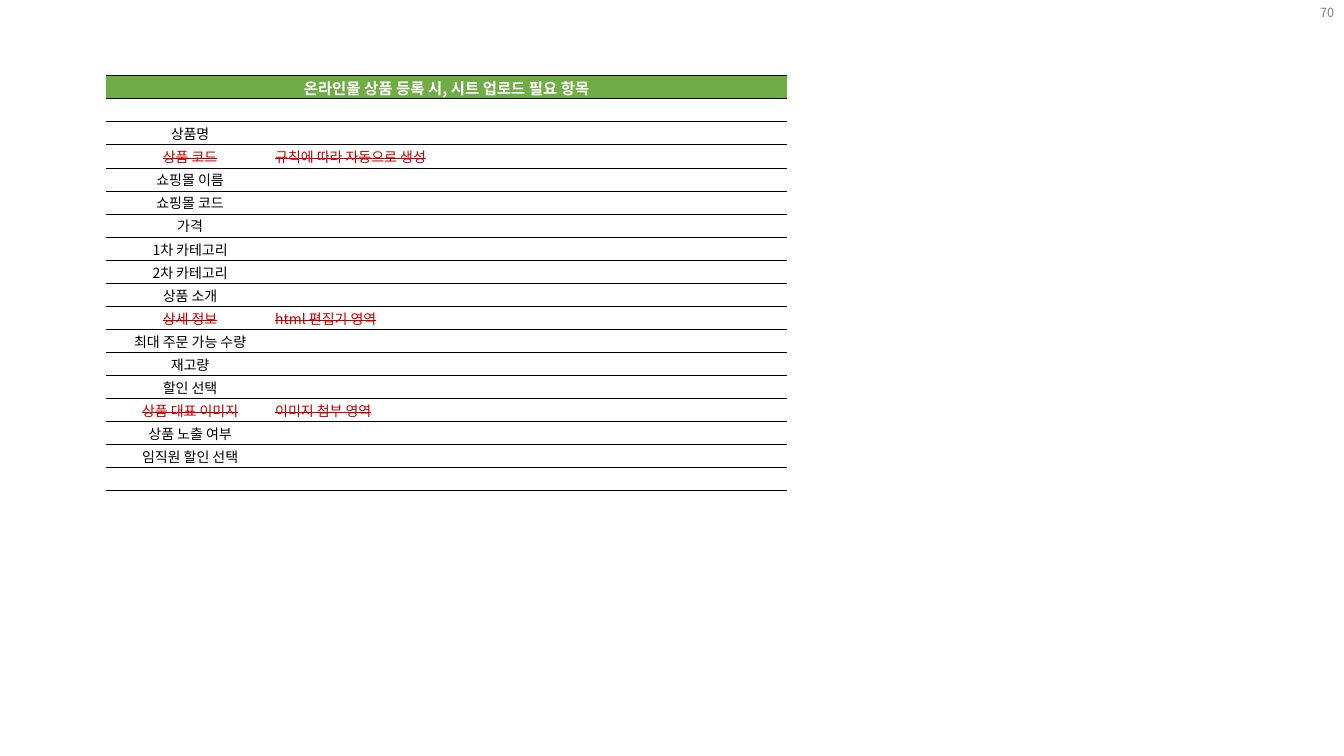
"""Build a slide listing the fields needed to upload shop products from a spreadsheet."""
from dataclasses import dataclass

import pptx
import pptx.dml.color
import pptx.enum.text
import pptx.oxml
import pptx.oxml.ns
import pptx.util
from pptx.util import Inches

ALIGN = pptx.enum.text.PP_ALIGN
MIDDLE = pptx.enum.text.MSO_ANCHOR.MIDDLE


@dataclass(frozen=True)
class Theme:
    font: str = "Noto Sans CJK KR"
    header_fill: str = "70AD47"
    header_text: str = "FFFFFF"
    text: str = "000000"
    removed: str = "C00000"
    page: str = "808080"
    rule: str = "000000"
    header_size: int = 11
    body_size: int = 10
    page_size: int = 9
    rule_width: float = 0.5


THEME = Theme()
TITLE = "온라인몰 상품 등록 시, 시트 업로드 필요 항목"
FIELDS = [
    "", "상품명", "상품 코드", "쇼핑몰 이름", "쇼핑몰 코드", "가격",
    "1차 카테고리", "2차 카테고리", "상품 소개", "상세 정보",
    "최대 주문 가능 수량", "재고량", "할인 선택", "상품 대표 이미지",
    "상품 노출 여부", "임직원 할인 선택", "",
]
REMOVED_NOTES = {
    "상품 코드": "규칙에 따라 자동으로 생성",
    "상세 정보": "html 편집기 영역",
    "상품 대표 이미지": "이미지 첨부 영역",
}


def rgb(color):
    return pptx.dml.color.RGBColor.from_string(color)


def add_run(p, text, size, color, bold=False, strike=False):
    r = p.add_run()
    r.text = text
    r.font.size = pptx.util.Pt(size)
    r.font.bold = bold
    r.font.color.rgb = rgb(color)
    r.font.name = THEME.font
    rpr = r.font._element
    ea = pptx.oxml.parse_xml(
        f'<a:ea {pptx.oxml.ns.nsdecls("a")} typeface="{THEME.font}"/>')
    rpr.find(pptx.oxml.ns.qn("a:latin")).addnext(ea)
    if strike:
        rpr.set("strike", "sngStrike")


def set_borders(cell):
    tc_pr = cell._tc.get_or_add_tcPr()
    ns = pptx.oxml.ns.nsdecls("a")
    width = int(pptx.util.Pt(THEME.rule_width))
    rule = f'<a:solidFill><a:srgbClr val="{THEME.rule}"/></a:solidFill>'
    for side, fill in zip("LRTB", ("<a:noFill/>", "<a:noFill/>", rule, rule)):
        tc_pr.append(pptx.oxml.parse_xml(
            f'<a:ln{side} {ns} w="{width}">{fill}</a:ln{side}>'))


def format_cell(cell, fill=None):
    cell.margin_left = cell.margin_right = cell.margin_top = Inches(0.01)
    cell.margin_bottom = 0
    cell.vertical_anchor = MIDDLE
    set_borders(cell)
    if fill:
        cell.fill.solid()
        cell.fill.fore_color.rgb = rgb(fill)
    else:
        cell.fill.background()


def fill_cell(cell, text, align, size, color, bold=False, strike=False):
    p = cell.text_frame.paragraphs[0]
    p.alignment = align
    if text:
        add_run(p, text, size, color, bold, strike)
    else:
        p._p.append(pptx.oxml.parse_xml(
            f'<a:endParaRPr {pptx.oxml.ns.nsdecls("a")} sz="{size * 100}"/>'))


def add_field_table(s):
    rows = len(FIELDS) + 1
    table = s.shapes.add_table(
        rows, 2, Inches(1.05), Inches(0.75), Inches(6.76), Inches(4.12)).table
    table.first_row = table.horz_banding = False
    for column, width in zip(table.columns, (1.67, 5.09)):
        column.width = Inches(width)

    for cell in table.rows[0].cells:
        format_cell(cell, THEME.header_fill)
    header = table.cell(0, 0)
    header.merge(table.cell(0, 1))
    fill_cell(header, TITLE, ALIGN.CENTER, THEME.header_size,
              THEME.header_text, bold=True)

    for row, field in enumerate(FIELDS, start=1):
        removed = field in REMOVED_NOTES
        color = THEME.removed if removed else THEME.text
        texts = (field, REMOVED_NOTES.get(field, ""))
        for col, align in enumerate((ALIGN.CENTER, ALIGN.LEFT)):
            cell = table.cell(row, col)
            format_cell(cell)
            fill_cell(cell, texts[col], align, THEME.body_size, color,
                      strike=removed)


def add_page_number(s, number):
    sp = s.shapes.add_textbox(
        Inches(10.33), Inches(-0.08), Inches(3), Inches(0.4))
    tf = sp.text_frame
    tf.word_wrap = True
    tf.vertical_anchor = MIDDLE
    p = tf.paragraphs[0]
    p.alignment = ALIGN.RIGHT
    add_run(p, number, THEME.page_size, THEME.page)


def main():
    prs = pptx.Presentation()
    prs.slide_width = Inches(13.33)
    prs.slide_height = Inches(7.5)
    s = prs.slides.add_slide(prs.slide_layouts[6])
    add_page_number(s, "70")
    add_field_table(s)
    prs.save("out.pptx")


if __name__ == "__main__":
    main()
